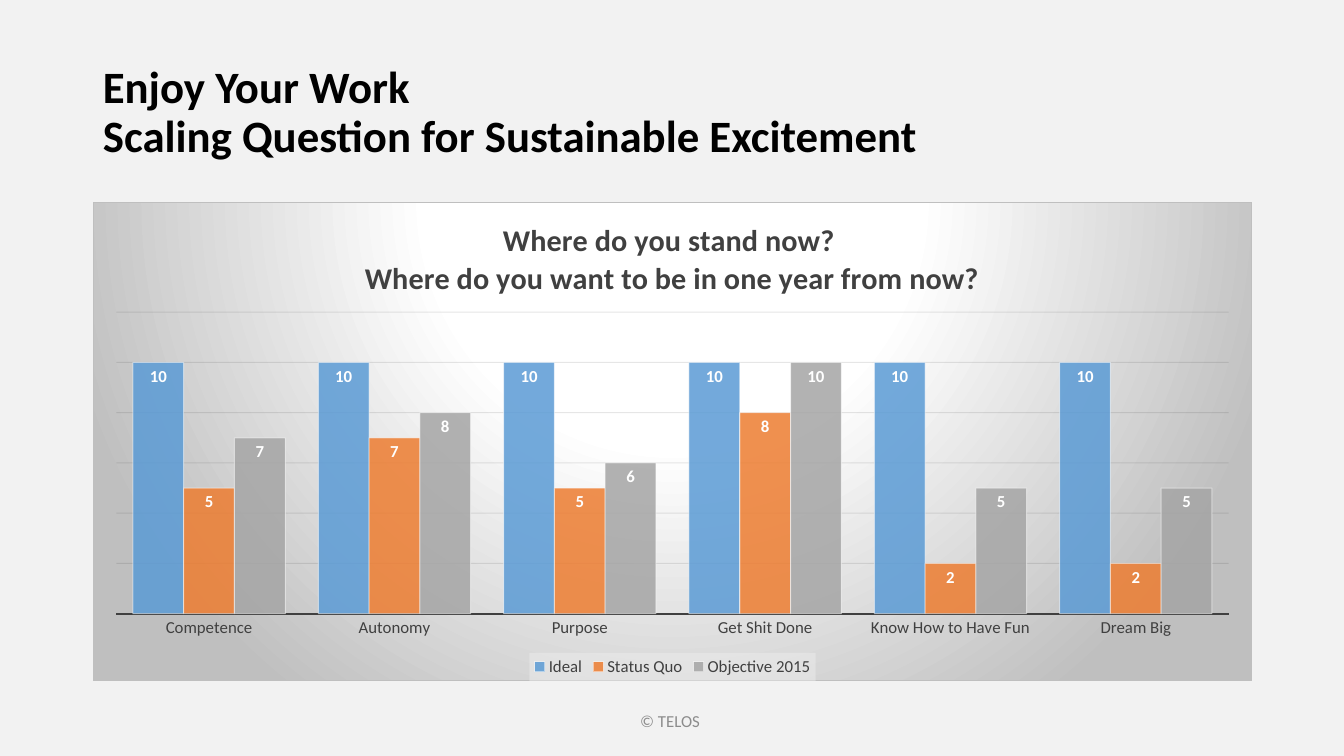
from lxml.etree import SubElement
from pptx import Presentation
from pptx.chart.data import CategoryChartData
from pptx.dml.color import RGBColor
from pptx.enum.chart import (XL_CHART_TYPE, XL_LABEL_POSITION,
                             XL_LEGEND_POSITION, XL_TICK_MARK)
from pptx.enum.text import MSO_ANCHOR, PP_ALIGN
from pptx.oxml import parse_xml
from pptx.oxml.ns import nsdecls, qn
from pptx.util import Inches, Pt

WIDTH, HEIGHT = Inches(13.33), Inches(7.5)
MARGIN = Inches(0.92)
CONTENT_WIDTH = Inches(11.5)
FONT = "Calibri"
COLORS = {
    "background": "F2F2F2", "title": "000000", "text": "404040",
    "footer": "8C8C8C", "grid": "0D0D0D", "white": "FFFFFF",
    "border": "BFBFBF", "Ideal": "5B9BD5", "Status Quo": "ED7D31",
    "Objective 2015": "A5A5A5",
}
CATEGORIES = ["Competence", "Autonomy", "Purpose", "Get Shit Done",
              "Know How to Have Fun", "Dream Big"]
SCORES = {
    "Ideal": [10, 10, 10, 10, 10, 10],
    "Status Quo": [5, 7, 5, 8, 2, 2],
    "Objective 2015": [7, 8, 6, 10, 5, 5],
}
QUESTIONS = ["Where do you stand now? ",
             "Where do you want to be in one year from now?"]


def color(name):
    return RGBColor.from_string(COLORS[name])


def style_font(font, size, name, bold=False):
    font.name, font.size, font.bold = FONT, Pt(size), bold
    font.color.rgb = color(name)


def style_fill(fill, name, opacity=100):
    fill.solid()
    fill.fore_color.rgb = color(name)
    set_opacity(fill._xPr, opacity)


def style_line(line, name, width=0.75, opacity=100):
    line.width = Pt(width)
    style_fill(line.fill, name, opacity)


def set_opacity(properties, opacity):
    """Make the solid fill directly inside the properties see-through."""
    if opacity < 100:
        tint = properties.find(qn("a:solidFill")).find(qn("a:srgbClr"))
        SubElement(tint, qn("a:alpha"), val=str(opacity * 1000))


def add_title(slide, text):
    title = slide.shapes.title
    title.left, title.top = MARGIN, Inches(0.4)
    title.width, title.height = CONTENT_WIDTH, Inches(1.45)
    frame = title.text_frame
    frame.text = text
    frame.vertical_anchor = MSO_ANCHOR.MIDDLE
    heading = frame.paragraphs[0]
    heading.alignment = PP_ALIGN.LEFT
    heading.line_spacing = 0.9
    style_font(heading.font, 32, "title", bold=True)


def add_footer(slide, text):
    width = Inches(4.5)
    footer = slide.shapes.add_textbox((WIDTH - width) // 2, Inches(6.95),
                                      width, Inches(0.4))
    frame = footer.text_frame
    frame.word_wrap = True
    frame.vertical_anchor = MSO_ANCHOR.MIDDLE
    frame.text = text
    notice = frame.paragraphs[0]
    notice.alignment = PP_ALIGN.CENTER
    style_font(notice.font, 12, "footer")


def add_backdrop(chart):
    """Fill the chart area with a round gradient and give it a border."""
    stops = "".join(
        f'<a:gs pos="{share * 1000}"><a:srgbClr val="{COLORS[name]}"/></a:gs>'
        for share, name in [(0, "white"), (39, "white"), (100, "border")])
    backdrop = parse_xml(
        f'<c:spPr {nsdecls("c", "a")}><a:gradFill><a:gsLst>{stops}</a:gsLst>'
        '<a:path path="circle"><a:fillToRect l="50000" t="-80000" r="50000" '
        'b="180000"/></a:path></a:gradFill><a:ln w="9525"><a:solidFill>'
        f'<a:srgbClr val="{COLORS["border"]}"/></a:solidFill></a:ln></c:spPr>')
    chart._chartSpace.find(qn("c:chart")).addnext(backdrop)


def place_plot(chart, x, y, w, h):
    """Place the inner plot area, in shares of the chart's size."""
    area = chart._chartSpace.find(qn("c:chart")).find(qn("c:plotArea"))
    for automatic in area.findall(qn("c:layout")):
        area.remove(automatic)
    layout = parse_xml(f'<c:layout {nsdecls("c")}/>')
    manual = SubElement(layout, qn("c:manualLayout"))
    settings = {"layoutTarget": "inner", "xMode": "edge", "yMode": "edge",
                "x": x, "y": y, "w": w, "h": h}
    for tag, value in settings.items():
        SubElement(manual, qn(f"c:{tag}"), val=str(value))
    area.insert(0, layout)


def add_chart_title(chart, lines):
    frame = chart.chart_title.text_frame
    frame.text = "\n".join(lines)
    for question in frame.paragraphs:
        style_font(question.font, 21.6, "text", bold=True)
    chart.chart_title.include_in_layout = False


def add_legend(chart):
    chart.has_legend = True
    legend = chart.legend
    legend.position = XL_LEGEND_POSITION.BOTTOM
    legend.include_in_layout = False
    style_font(legend.font, 12, "text")
    panel = parse_xml(
        f'<c:spPr {nsdecls("c", "a")}><a:solidFill><a:srgbClr '
        f'val="{COLORS["background"]}"/></a:solidFill></c:spPr>')
    set_opacity(panel, 40)
    legend._element.find(qn("c:overlay")).addnext(panel)


def style_axes(chart):
    categories, scores = chart.category_axis, chart.value_axis
    categories.major_tick_mark = XL_TICK_MARK.NONE
    categories.minor_tick_mark = XL_TICK_MARK.NONE
    style_line(categories.format.line, "text", 1.5)
    style_font(categories.tick_labels.font, 12, "text")
    scores.minimum_scale, scores.maximum_scale = 0, 12
    scores.major_unit = 2
    scores.has_major_gridlines = True
    style_line(scores.major_gridlines.format.line, "grid", opacity=10)
    scores.visible = False


def style_bars(plot):
    plot.gap_width, plot.overlap = 65, 0
    plot.vary_by_categories = False
    for series in plot.series:
        style_fill(series.format.fill, series.name, 85)
        style_line(series.format.line, "white", opacity=50)
        labels = series.data_labels
        labels.show_value = True
        labels.position = XL_LABEL_POSITION.INSIDE_END
        style_font(labels.font, 12, "white", bold=True)


def add_score_chart(slide):
    scores = CategoryChartData()
    scores.categories = CATEGORIES
    for name, values in SCORES.items():
        scores.add_series(name, values)
    chart = slide.shapes.add_chart(
        XL_CHART_TYPE.COLUMN_CLUSTERED, MARGIN, Inches(2),
        CONTENT_WIDTH, Inches(4.76), scores).chart
    style_font(chart.font, 10, "title")
    add_backdrop(chart)
    add_chart_title(chart, QUESTIONS)
    add_legend(chart)
    style_axes(chart)
    style_bars(chart.plots[0])
    place_plot(chart, 0.02, 0.23, 0.96, 0.63)


def main():
    deck = Presentation()
    deck.slide_width, deck.slide_height = WIDTH, HEIGHT
    slide = deck.slides.add_slide(deck.slide_layouts.get_by_name("Title Only"))
    style_fill(slide.background.fill, "background")
    add_title(slide,
              "Enjoy Your Work\vScaling Question for Sustainable Excitement")
    add_score_chart(slide)
    add_footer(slide, "© TELOS ")
    deck.save("out.pptx")


if __name__ == "__main__":
    main()
